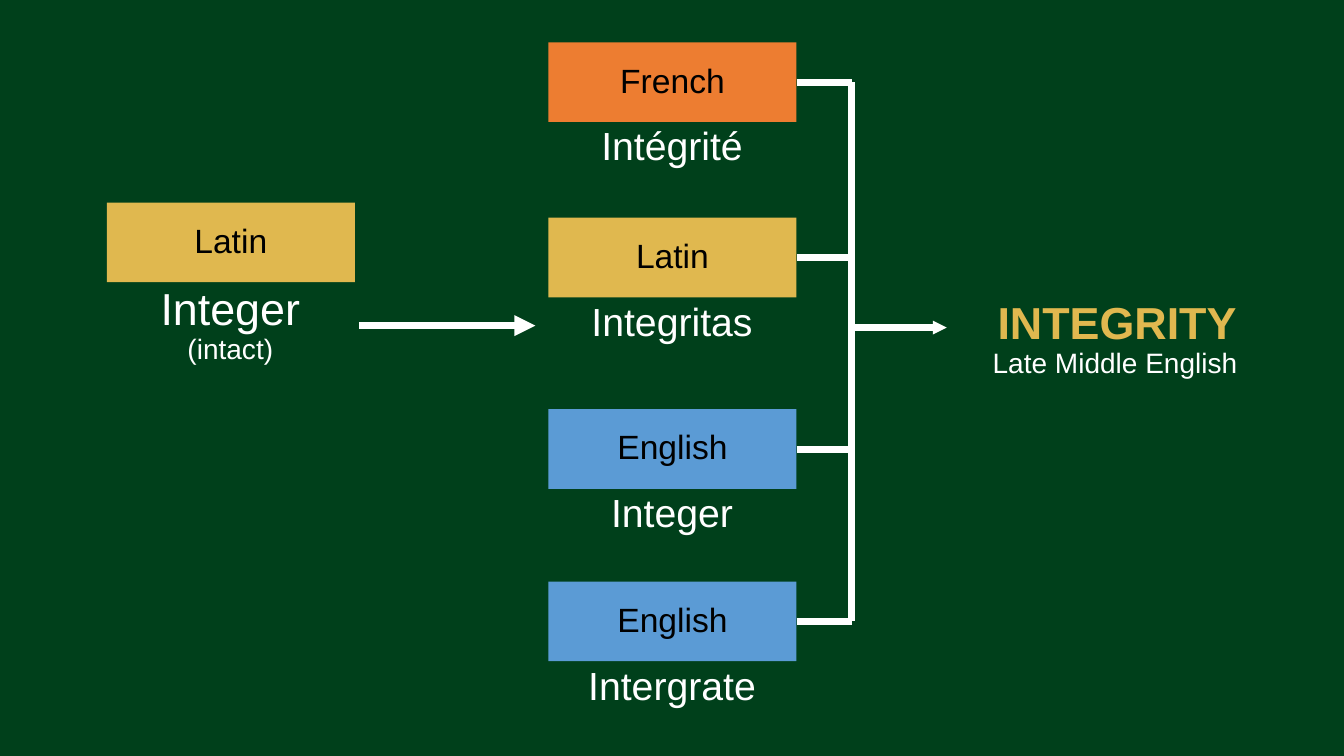
"""Draw the family tree of the word integrity."""
from dataclasses import dataclass

from lxml import etree
from pptx import Presentation
from pptx.dml.color import RGBColor
from pptx.enum import shapes, text
from pptx.oxml import ns
from pptx.util import Inches, Pt

GOLD, ORANGE, BLUE = "E0B84F", "ED7D31", "5B9BD5"
WHITE, BLACK, GREEN = "FFFFFF", "000000", "00401B"
BOX_W, BOX_H = 2.46, 0.79
CAP_W, CAP_PAD = 2.71, 0.13
SPINE = 8.45


@dataclass
class Line:
    words: str
    size: int
    color: str = WHITE
    bold: bool = False


@dataclass
class Root:
    tongue: str
    fill: str
    left: float
    top: float
    lines: list[Line]
    cap_h: float = 0.79


FIRST = Root("Latin", GOLD, 1.06, 2.01,
             [Line("Integer", 32), Line("(intact)", 20)], 1.16)
ROOTS = [
    Root(tongue, fill, 5.44, top, [Line(word, 28)])
    for tongue, fill, top, word in [
        ("French", ORANGE, 0.42, "Intégrité"),
        ("Latin", GOLD, 2.16, "Integritas"),
        ("English", BLUE, 4.06, "Integer"),
        ("English", BLUE, 5.77, "Intergrate"),
    ]
]


def paint(form, color: str) -> None:
    """Give a fill one solid colour."""
    form.solid()
    form.fore_color.rgb = RGBColor.from_string(color)


def place(shape, left: float, top: float, width: float, height: float) -> None:
    """Set the place and size of a shape in inches."""
    shape.left, shape.top = Inches(left), Inches(top)
    shape.width, shape.height = Inches(width), Inches(height)


def write(shape, lines: list[Line], anchor=text.MSO_ANCHOR.TOP) -> None:
    """Fill a shape with centred lines, one run to a paragraph."""
    frame = shape.text_frame
    frame.word_wrap = True
    frame.auto_size = text.MSO_AUTO_SIZE.NONE
    frame.vertical_anchor = anchor
    for i, line in enumerate(lines):
        para = frame.add_paragraph() if i else frame.paragraphs[0]
        para.alignment = text.PP_ALIGN.CENTER
        para.line_spacing = 0.9
        run = para.add_run()
        run.text = line.words
        run.font.name = "Arial"
        run.font.size = Pt(line.size)
        run.font.bold = line.bold
        paint(run.font.fill, line.color)


def add_note(slide, left: float, top: float, width: float, height: float,
             lines: list[Line]) -> None:
    """Add a text box that holds the given lines."""
    note = slide.shapes.add_textbox(
        Inches(left), Inches(top), Inches(width), Inches(height))
    write(note, lines)


def add_root(slide, root: Root):
    """Add a language box with its word below, and return the box."""
    add_note(slide, root.left - CAP_PAD, root.top + BOX_H, CAP_W, root.cap_h,
             root.lines)
    box = slide.shapes.add_shape(
        shapes.MSO_SHAPE.RECTANGLE, Inches(root.left), Inches(root.top),
        Inches(BOX_W), Inches(BOX_H))
    box.shadow.inherit = False
    paint(box.fill, root.fill)
    box.line.fill.background()
    write(box, [Line(root.tongue, 24, BLACK)], text.MSO_ANCHOR.MIDDLE)
    return box


def add_rule(slide, x1: float, y1: float, x2: float, y2: float,
             head: str = ""):
    """Add a thick white line, with an arrowhead of the given size if any."""
    rule = slide.shapes.add_connector(
        shapes.MSO_CONNECTOR.STRAIGHT, Inches(x1), Inches(y1), Inches(x2),
        Inches(y2))
    rule.line.width = Pt(5)
    paint(rule.line.fill, WHITE)
    if head:
        etree.SubElement(rule.line._get_or_add_ln(), ns.qn("a:tailEnd"),
                         type="triangle", w=head, len=head)
    etree.SubElement(rule._element.spPr, ns.qn("a:effectLst"))
    return rule


def main() -> None:
    """Build the slide and save it."""
    deck = Presentation()
    deck.slide_width, deck.slide_height = Inches(13.33), Inches(7.5)
    slide = deck.slides.add_slide(deck.slide_layouts[5])
    paint(slide.background.fill, GREEN)

    title = slide.shapes.title
    place(title, 9.35, 2.93, 3.46, 0.79)
    write(title, [Line("INTEGRITY", 32, GOLD, True)])
    add_note(slide, 9.11, 3.42, 3.9, 0.6, [Line("Late Middle English", 20)])

    add_root(slide, FIRST)
    for root in ROOTS:
        box = add_root(slide, root)
        mid = root.top + BOX_H / 2
        stub = add_rule(slide, root.left + BOX_W, mid, SPINE, mid)
        stub.begin_connect(box, 3)

    ends = [root.top + BOX_H / 2 for root in (ROOTS[0], ROOTS[-1])]
    add_rule(slide, SPINE, ends[0], SPINE, ends[1])
    add_rule(slide, SPINE, 3.25, 9.39, 3.25, "sm")
    add_rule(slide, 3.56, 3.23, 5.31, 3.23, "med")
    deck.save("out.pptx")


if __name__ == "__main__":
    main()
